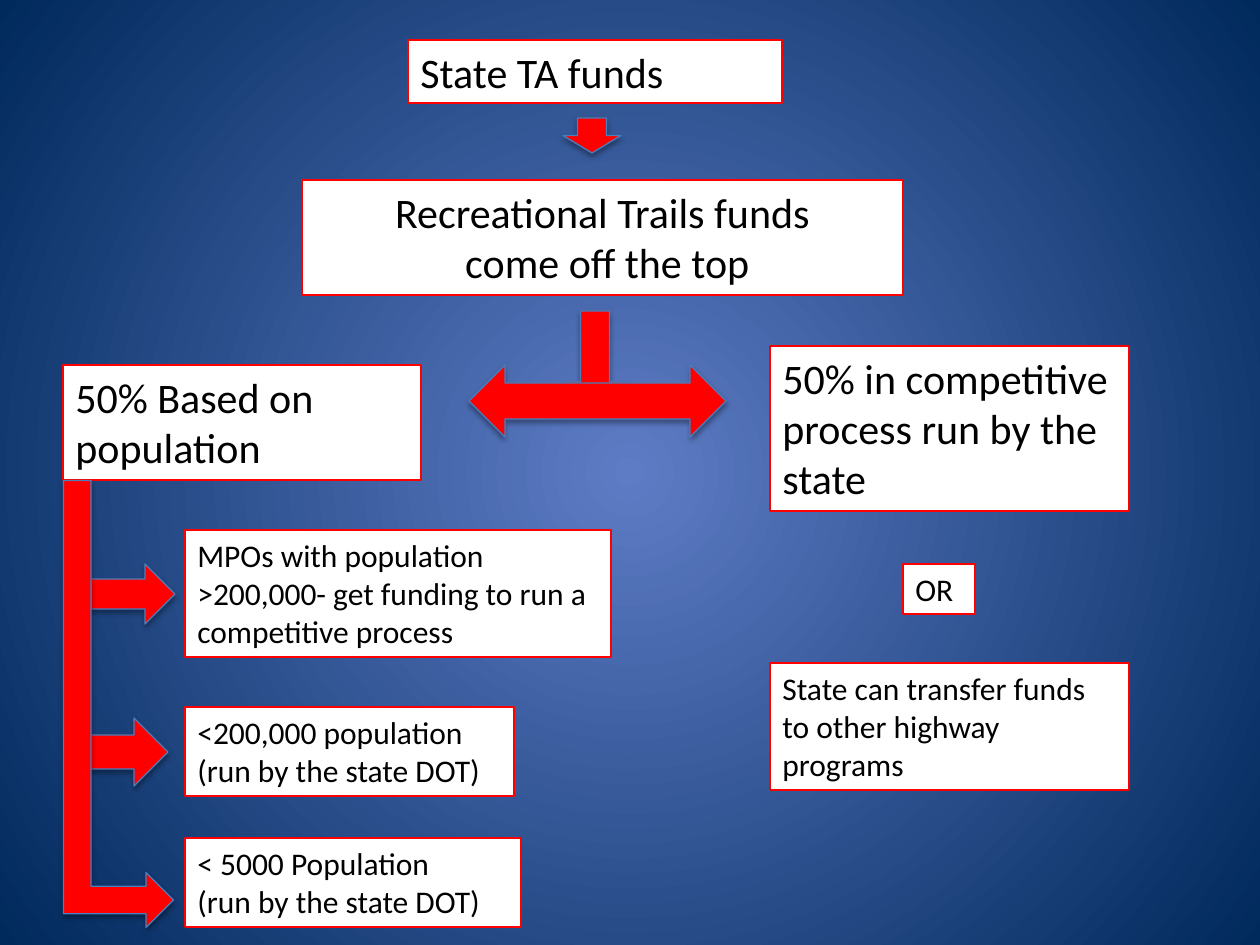
"""Builds a flow chart slide of how state TA funds are divided."""
from collections import namedtuple
from dataclasses import dataclass

from lxml import etree
from pptx import Presentation
from pptx.dml.color import RGBColor
from pptx.enum.shapes import MSO_SHAPE
from pptx.enum.text import MSO_AUTO_SIZE, PP_ALIGN
from pptx.oxml import parse_xml
from pptx.oxml.ns import nsdecls, qn
from pptx.util import Emu, Pt

DOWN = MSO_SHAPE.DOWN_ARROW
RIGHT = MSO_SHAPE.RIGHT_ARROW
LEFT_RIGHT = MSO_SHAPE.LEFT_RIGHT_ARROW
BENT_UP = MSO_SHAPE.BENT_UP_ARROW
LEFT_ALIGN = PP_ALIGN.LEFT
CENTER = PP_ALIGN.CENTER
GROW = MSO_AUTO_SIZE.SHAPE_TO_FIT_TEXT

EMU_PER_PX = 914400 / 126
Box = namedtuple("Box", "left top width height")


@dataclass(frozen=True)
class Theme:
    """Colours and type sizes of the slide."""
    font: str = "Calibri"
    heading: int = 24
    detail: int = 18
    line_width: float = 0.75
    ink: RGBColor = RGBColor(0, 0, 0)
    paper: RGBColor = RGBColor(255, 255, 255)
    red: RGBColor = RGBColor(255, 0, 0)
    arrow_edge: RGBColor = RGBColor(0x4B, 0x7E, 0xBC)
    glow: RGBColor = RGBColor(0x5E, 0x7C, 0xC5)
    navy: RGBColor = RGBColor(0x00, 0x29, 0x5C)


THEME = Theme()


def px(length):
    """Turn a length in px into EMU."""
    return Emu(round(length * EMU_PER_PX))


def place(region, left, top, width, height):
    """Give the EMU frame of a part that lies inside a region."""
    return [px(n) for n in (region.left + left, region.top + top, width, height)]


def paint(shape, fill, edge):
    """Set the fill and outline of a shape."""
    shape.fill.solid()
    shape.fill.fore_color.rgb = fill
    shape.line.color.rgb = edge
    shape.line.width = Pt(THEME.line_width)


def add_label(slide, frame, text, size, align=LEFT_ALIGN):
    """Add a white text box with a red outline."""
    label = slide.shapes.add_textbox(*frame)
    paint(label, THEME.paper, THEME.red)
    text_frame = label.text_frame
    text_frame.word_wrap = True
    text_frame.auto_size = GROW
    text_frame.text = text
    for paragraph in text_frame.paragraphs:
        paragraph.alignment = align
        for run in paragraph.runs:
            run.font.name = THEME.font
            run.font.size = Pt(size)
            run.font.color.rgb = THEME.ink


def add_arrow(slide, kind, frame, rotation=0):
    """Add a red block arrow with a soft shadow below it."""
    arrow = slide.shapes.add_shape(kind, *frame)
    paint(arrow, THEME.red, THEME.arrow_edge)
    arrow.rotation = rotation
    arrow.shadow.inherit = False
    effects = arrow._element.spPr.find(qn("a:effectLst"))
    effects.append(parse_xml(
        f'<a:outerShdw {nsdecls("a")} blurRad="{Pt(3.1)}" dist="{Pt(1.8)}" '
        'dir="5400000" rotWithShape="0"><a:srgbClr val="000000">'
        '<a:alpha val="35000"/></a:srgbClr></a:outerShdw>'))


def paint_background(slide):
    """Fill the background with a gradient that spreads from the centre."""
    fill = slide.background.fill
    fill.gradient()
    for stop, color in zip(fill.gradient_stops, (THEME.glow, THEME.navy)):
        stop.color.rgb = color
    gradient = slide.element.find(".//" + qn("a:gradFill"))
    gradient.remove(gradient.find(qn("a:lin")))
    spread = etree.SubElement(gradient, qn("a:path"), path="circle")
    etree.SubElement(spread, qn("a:fillToRect"),
                     l="50000", t="50000", r="50000", b="50000")


def add_source(slide, region):
    """Place the funds and the share taken off the top."""
    add_label(slide, place(region, 106, 0, 374, 63), "State TA funds", THEME.heading)
    add_arrow(slide, DOWN, place(region, 261, 78, 58, 35))
    add_label(slide, place(region, 0, 140, region.width, 115),
              "Recreational Trails funds\n come off the top", THEME.heading, CENTER)


def add_split(slide, region):
    """Place the arrows that divide the funds into two branches."""
    add_arrow(slide, DOWN, place(region, 97, 0, 58, 100))
    add_arrow(slide, LEFT_RIGHT, place(region, 0, 54, region.width, 72))


def add_population_branch(slide, region):
    """Place the population share, its three tiers and their arrows."""
    add_label(slide, place(region, 0, 0, region.width, 115),
              "50% Based on population", THEME.heading)
    tiers = (
        (165, 426, 127, "MPOs with population >200,000- get funding to run a competitive process"),
        (342, 329, 89, "<200,000 population (run by the state DOT)"),
        (473, 336, 89, "< 5000 Population\n(run by the state DOT)"),
    )
    for top, width, height, text in tiers:
        add_label(slide, place(region, 122, top, width, height), text, THEME.detail)
    add_arrow(slide, RIGHT, place(region, 28, 199, 84, 60))
    add_arrow(slide, RIGHT, place(region, 21, 353, 84, 68))
    add_arrow(slide, BENT_UP, place(region, -168, 284, 447, 110), rotation=90)


def add_state_branch(slide, region):
    """Place the competitive share and its alternative."""
    add_label(slide, place(region, 0, 0, region.width, 165),
              "50% in competitive process run by the state", THEME.heading)
    add_label(slide, place(region, 133, 218, 72, 50), "OR", THEME.detail)
    add_label(slide, place(region, 0, 317, region.width, 127),
              "State can transfer funds to other highway programs", THEME.detail)


def main():
    """Build the slide and save it."""
    presentation = Presentation()
    presentation.slide_width = px(1260)
    presentation.slide_height = px(945)
    slide = presentation.slides.add_slide(presentation.slide_layouts[6])
    paint_background(slide)
    add_source(slide, Box(302, 40, 601, 255))
    add_split(slide, Box(469, 311, 257, 126))
    add_population_branch(slide, Box(63, 365, 358, 562))
    add_state_branch(slide, Box(770, 346, 359, 444))
    presentation.save("out.pptx")


if __name__ == "__main__":
    main()
